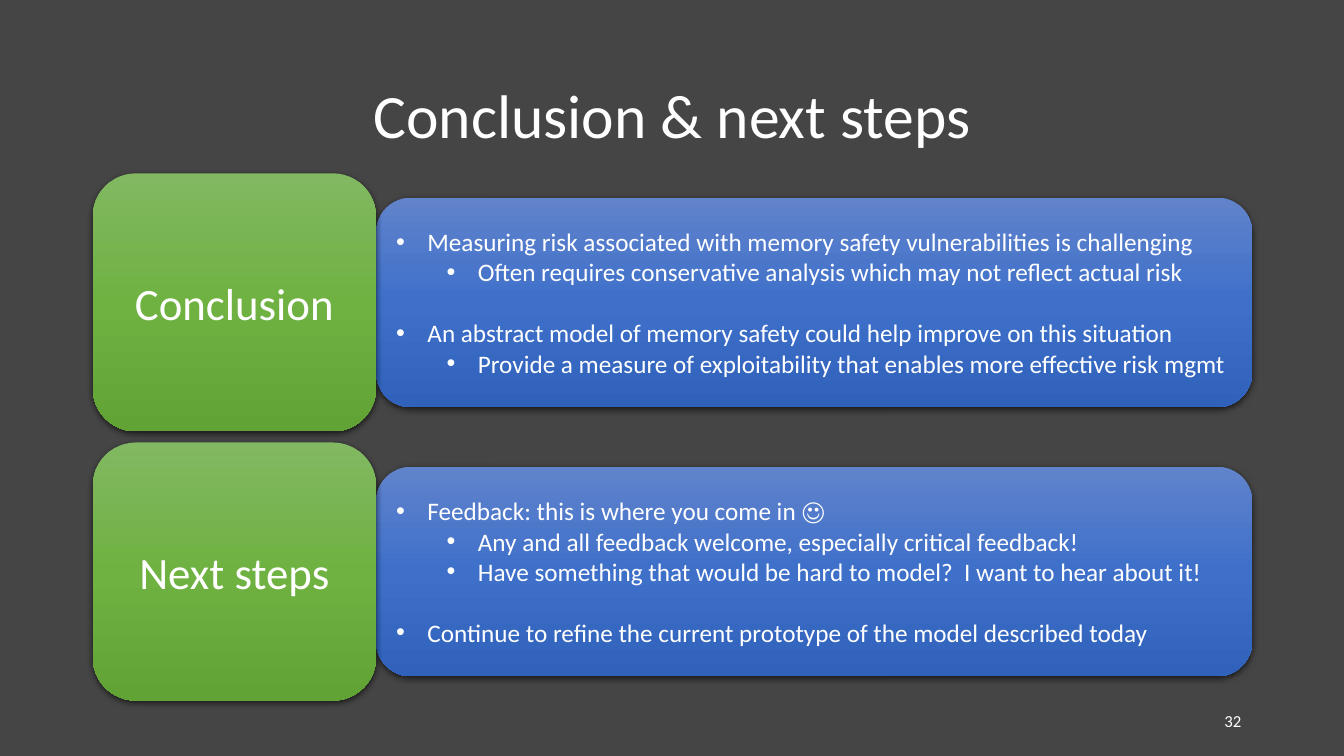
import pptx
import pptx.dml.color
import pptx.enum.shapes
import pptx.enum.text
import pptx.oxml
import pptx.oxml.ns
import pptx.util
import lxml.etree

Inches, Pt = pptx.util.Inches, pptx.util.Pt
ALIGN = pptx.enum.text.PP_ALIGN
NS = pptx.oxml.ns.nsdecls("a")

MARGIN, CONTENT_WIDTH = 0.92, 11.5
LABEL_WIDTH, LABEL_HEIGHT = 2.81, 2.56
DETAIL_HEIGHT = 2.08
FIRST_ROW, ROW_PITCH = 1.72, 2.67
BULLET_INDENT, LEVEL_STEP = 0.31, 0.5
LINE_HEIGHT = 22
GREEN = ["81B861", "6FB242", "62A336"]
BLUE = ["6183CB", "3E70CA", "3062BB"]

# Heading, then groups of bullets; within a group the first is the main point
sections = [
    ("Conclusion", [
        ["Measuring risk associated with memory safety vulnerabilities is challenging",
         "Often requires conservative analysis which may not reflect actual risk"],
        ["An abstract model of memory safety could help improve on this situation",
         "Provide a measure of exploitability that enables more effective risk mgmt"],
    ]),
    ("Next steps", [
        ["Feedback: this is where you come in ☺",
         "Any and all feedback welcome, especially critical feedback!",
         "Have something that would be hard to model?  I want to hear about it!"],
        ["Continue to refine the current prototype of the model described today"],
    ]),
]


def write(paragraph, text, size, align, color="FFFFFF"):
    paragraph.alignment = align
    run = paragraph.add_run()
    run.text = text
    run.font.name = "Calibri"
    run.font.size = Pt(size)
    run.font.color.rgb = pptx.dml.color.RGBColor.from_string(color)


def add_panel(left, top, width, height, shades):
    """Add a borderless rounded panel with a vertical gradient and a soft shadow."""
    panel = slide.shapes.add_shape(
        pptx.enum.shapes.MSO_SHAPE.ROUNDED_RECTANGLE,
        Inches(left), Inches(top), Inches(width), Inches(height))
    panel.line.fill.background()
    panel.shadow.inherit = False
    stops = "".join(f'<a:gs pos="{i * 50000}"><a:srgbClr val="{shade}"/></a:gs>'
                    for i, shade in enumerate(shades))
    properties = panel.fill._xPr
    properties.insert(2, pptx.oxml.parse_xml(
        f'<a:gradFill {NS} rotWithShape="1"><a:gsLst>{stops}</a:gsLst>'
        '<a:lin ang="5400000" scaled="0"/></a:gradFill>'))
    properties.find(pptx.oxml.ns.qn("a:effectLst")).append(pptx.oxml.parse_xml(
        f'<a:outerShdw {NS} blurRad="{Pt(4.5)}" dist="{Pt(1.5)}" dir="5400000" '
        'algn="ctr" rotWithShape="0"><a:srgbClr val="000000">'
        '<a:alpha val="63000"/></a:srgbClr></a:outerShdw>'))
    panel.text_frame.word_wrap = True
    panel.text_frame.vertical_anchor = pptx.enum.text.MSO_ANCHOR.MIDDLE
    return panel.text_frame


deck = pptx.Presentation()
deck.slide_width, deck.slide_height = Inches(13.33), Inches(7.5)
slide = deck.slides.add_slide(deck.slide_layouts[6])
slide.background.fill.solid()
slide.background.fill.fore_color.rgb = pptx.dml.color.RGBColor.from_string("454545")

# Title and page number
for text, size, align, left, top, width, height in [
    ("Conclusion & next steps", 44, ALIGN.CENTER, MARGIN, 0.4, CONTENT_WIDTH, 1.45),
    ("32", 12, ALIGN.RIGHT, 8.83, 6.95, 3.58, 0.4),
]:
    frame = slide.shapes.add_textbox(
        Inches(left), Inches(top), Inches(width), Inches(height)).text_frame
    frame.word_wrap = True
    frame.vertical_anchor = pptx.enum.text.MSO_ANCHOR.MIDDLE
    write(frame.paragraphs[0], text, size, align)

# One row per section: blue details beside a green label
for row, (heading, groups) in enumerate(sections):
    top = FIRST_ROW + row * ROW_PITCH
    details = add_panel(MARGIN + LABEL_WIDTH, top + (LABEL_HEIGHT - DETAIL_HEIGHT) / 2,
                        CONTENT_WIDTH - LABEL_WIDTH, DETAIL_HEIGHT, BLUE)
    for group_index, group in enumerate(groups):
        for point_index, point in enumerate(group):
            is_first = group_index == point_index == 0
            paragraph = details.paragraphs[0] if is_first else details.add_paragraph()
            paragraph.level = min(point_index, 1)
            if group_index and not point_index:
                paragraph.space_before = Pt(LINE_HEIGHT)
            write(paragraph, point, 18, ALIGN.LEFT)
            layout = paragraph._p.get_or_add_pPr()
            layout.set("marL", str(Inches(BULLET_INDENT + paragraph.level * LEVEL_STEP)))
            layout.set("indent", str(Inches(-BULLET_INDENT)))
            for tag, key, value in [("a:buFont", "typeface", "Arial"), ("a:buChar", "char", "•")]:
                lxml.etree.SubElement(layout, pptx.oxml.ns.qn(tag)).set(key, value)
    label = add_panel(MARGIN, top, LABEL_WIDTH, LABEL_HEIGHT, GREEN)
    write(label.paragraphs[0], heading, 32, ALIGN.CENTER)

deck.save("out.pptx")
